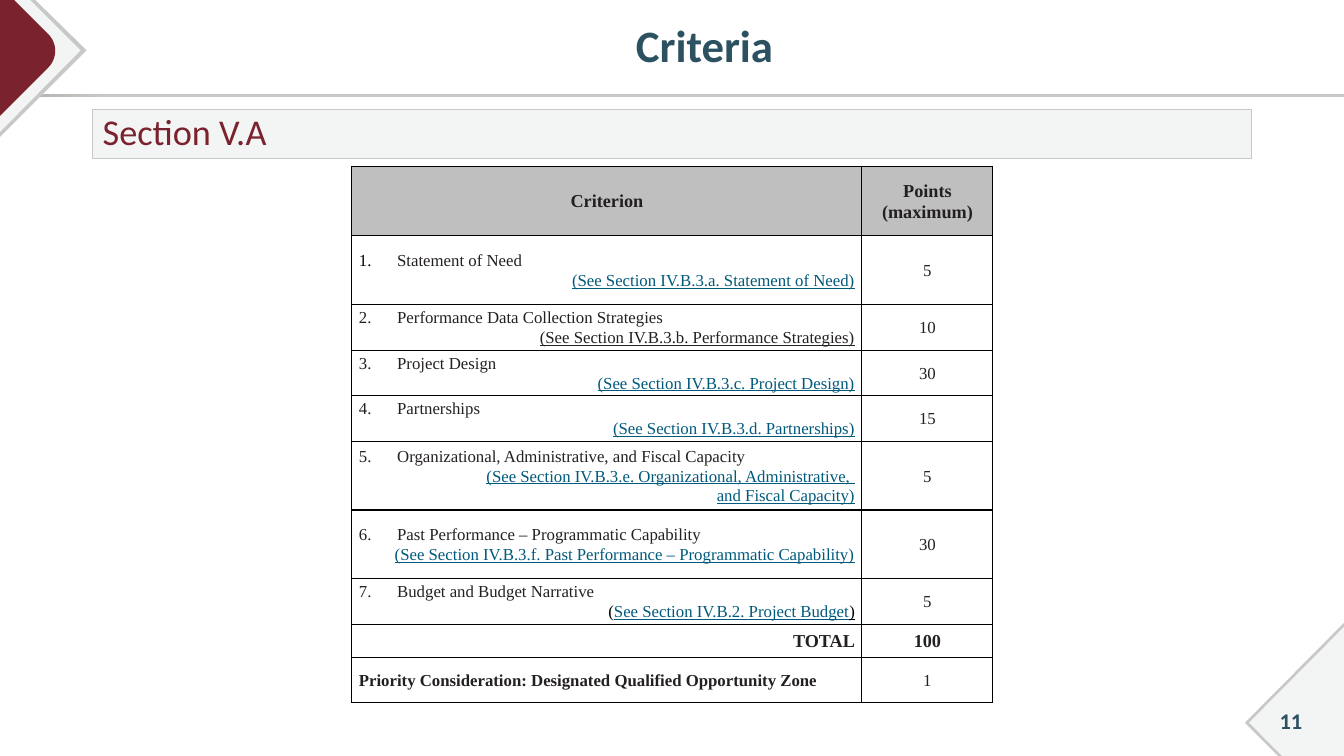
from lxml.etree import SubElement
from pptx import Presentation
from pptx.dml.color import RGBColor
from pptx.enum.shapes import MSO_SHAPE
from pptx.enum.text import MSO_ANCHOR, PP_ALIGN
from pptx.oxml import parse_xml
from pptx.oxml.ns import nsdecls, qn
from pptx.util import Inches, Pt

WIDTH, HEIGHT = Inches(13.333), Inches(7.5)
GREY, PALE, MAROON, NAVY = "C8C8C6", "F3F4F4", "7A232F", "2C5261"
INK, LINK, BLACK, HEADER = "242021", "005A7C", "000000", "BFBFBF"
LEFT, CENTER, RIGHT = PP_ALIGN.LEFT, PP_ALIGN.CENTER, PP_ALIGN.RIGHT
SERIF = "Times New Roman"
TALL, SHORT = 9.07, 6.05

# Name, reference lines, points and row height (percent of the slide)
CRITERIA = [
    ("Statement of Need", ["(See Section IV.B.3.a. Statement of Need)"], 5, TALL),
    ("Performance Data Collection Strategies",
     ["(See Section IV.B.3.b. Performance Strategies)"], 10, SHORT),
    ("Project Design", ["(See Section IV.B.3.c. Project Design)"], 30, SHORT),
    ("Partnerships", ["(See Section IV.B.3.d. Partnerships)"], 15, SHORT),
    ("Organizational, Administrative, and Fiscal Capacity",
     ["(See Section IV.B.3.e. Organizational, Administrative, ",
      "and Fiscal Capacity)"], 5, TALL),
    ("Past Performance – Programmatic Capability",
     ["(See Section IV.B.3.f. Past Performance – Programmatic Capability)"], 30, TALL),
    ("Budget and Budget Narrative", ["See Section IV.B.2. Project Budget"], 5, SHORT),
]
PLAIN_REFERENCE, BRACKETED_REFERENCE = 2, 7


def rgb(color):
    return RGBColor.from_string(color)


def across(percent):
    return round(WIDTH * percent / 100)


def down(percent):
    return round(HEIGHT * percent / 100)


def place(left, top, width, height):
    return across(left), down(top), across(width), down(height)


def add_run(paragraph, text, size, color, font=SERIF, bold=False, underline=False):
    run = paragraph.add_run()
    run.text = text
    run.font.name, run.font.size = font, Pt(size)
    run.font.bold, run.font.underline = bold, underline
    run.font.color.rgb = rgb(color)


def add_paragraph(frame, align, spacing=1.06):
    """Start a paragraph, using the frame's empty first one if there is one."""
    first = frame.paragraphs[0]
    paragraph = frame.add_paragraph() if first.runs else first
    paragraph.alignment, paragraph.line_spacing = align, spacing
    return paragraph


def number_paragraph(paragraph, number, color):
    properties = paragraph._p.get_or_add_pPr()
    properties.set("marL", str(Inches(0.38)))
    properties.set("indent", str(-Inches(0.38)))
    bullet_color = SubElement(properties, qn("a:buClr"))
    SubElement(bullet_color, qn("a:srgbClr"), val=color)
    SubElement(properties, qn("a:buAutoNum"), type="arabicPeriod", startAt=str(number))


def add_rectangle(slide, box):
    shape = slide.shapes.add_shape(MSO_SHAPE.RECTANGLE, *place(*box))
    shape.shadow.inherit = False
    return shape


def add_outline(slide, points, color):
    corners = [(across(x), down(y)) for x, y in points]
    builder = slide.shapes.build_freeform(*corners[0])
    builder.add_line_segments(corners[1:])
    shape = builder.convert_to_shape()
    shape.shadow.inherit = False
    shape.fill.solid()
    shape.fill.fore_color.rgb = rgb(color)
    shape.line.fill.background()


def curve(start, control1, control2, end, steps=16):
    """Points along a cubic Bezier curve."""
    points = []
    for step in range(steps + 1):
        t = step / steps
        weights = ((1 - t) ** 3, 3 * t * (1 - t) ** 2, 3 * t * t * (1 - t), t ** 3)
        anchors = (start, control1, control2, end)
        points.append(tuple(sum(w * a[axis] for w, a in zip(weights, anchors))
                            for axis in (0, 1)))
    return points


def add_text_box(slide, box, text, size, align, spacing=1.0):
    frame = slide.shapes.add_textbox(*place(*box)).text_frame
    frame.word_wrap = True
    frame.vertical_anchor = MSO_ANCHOR.MIDDLE
    add_run(add_paragraph(frame, align, spacing), text, size, NAVY, "Calibri", bold=True)
    return frame


def add_decoration(slide):
    rule = add_rectangle(slide, (0, 12.4, 100, 0.4))
    rule.line.fill.background()
    rule.fill.gradient()
    rule.fill.gradient_angle = 0
    for stop, position, color in zip(rule.fill.gradient_stops, (0, 0.08), ("ABABA8", GREY)):
        stop.position, stop.color.rgb = position, rgb(color)

    add_outline(slide, [(0, 0), (2.63, 0), (6.45, 6.67), (0, 18.13)], GREY)
    add_outline(slide, [(0, 0), (2.25, 0), (6, 6.67), (0, 17.47)], PALE)
    rounded_tip = curve((3.6, 4.53), (4.28, 5.73), (4.28, 7.73), (3.6, 8.93))
    add_outline(slide, [(0, 0), (1.05, 0), *rounded_tip, (0, 15.33)], MAROON)
    add_outline(slide, [(100, 82.4), (100, 100), (95.1, 100), (92.63, 95.6)], GREY)
    add_outline(slide, [(100, 82.93), (100, 100), (95.4, 100), (92.93, 95.6)], PALE)


def add_section_bar(slide):
    bar = add_rectangle(slide, (6.9, 14.53, 86.25, 6.4))
    bar.fill.solid()
    bar.fill.fore_color.rgb = rgb(PALE)
    bar.line.color.rgb = rgb(GREY)
    bar.line.width = Pt(0.75)
    bar.text_frame.vertical_anchor = MSO_ANCHOR.MIDDLE
    paragraph = add_paragraph(bar.text_frame, LEFT, 0.85)
    add_run(paragraph, "Section V.A", 25.9, MAROON, "Calibri")


def format_cell(cell, fill=None):
    cell.vertical_anchor = MSO_ANCHOR.MIDDLE
    cell.margin_left = cell.margin_right = Inches(0.07)
    cell.margin_top = cell.margin_bottom = 0
    if fill:
        cell.fill.solid()
        cell.fill.fore_color.rgb = rgb(fill)
    else:
        cell.fill.background()
    properties = cell._tc.get_or_add_tcPr()
    for index, side in enumerate("LRTB"):
        properties.insert(index, parse_xml(
            f'<a:ln{side} {nsdecls("a")} w="{Pt(1)}"><a:solidFill>'
            f'<a:srgbClr val="{BLACK}"/></a:solidFill></a:ln{side}>'))


def write_cell(cell, lines, align, size=12, bold=False):
    for line in lines:
        add_run(add_paragraph(cell.text_frame, align), line, size, INK, bold=bold)


def write_criterion(cell, number, name, references):
    paragraph = add_paragraph(cell.text_frame, LEFT)
    number_paragraph(paragraph, number, BLACK if number == 1 else INK)
    add_run(paragraph, name, 12, INK)
    color = INK if number == PLAIN_REFERENCE else LINK
    for reference in references:
        paragraph = add_paragraph(cell.text_frame, RIGHT)
        if number == BRACKETED_REFERENCE:
            add_run(paragraph, "(", 12, BLACK)
        add_run(paragraph, reference, 12, color, underline=True)
        if number == BRACKETED_REFERENCE:
            add_run(paragraph, ")", 12, BLACK, underline=True)


def add_criteria_table(slide):
    widths = (37.95, 9.75)
    heights = [9.2, *(row[3] for row in CRITERIA), 4.35, SHORT]
    box = place(26.18, 22, sum(widths), sum(heights))
    table = slide.shapes.add_table(len(heights), len(widths), *box).table
    table.first_row = table.horz_banding = False
    for column, width in zip(table.columns, widths):
        column.width = across(width)
    for index, height in enumerate(heights):
        table.rows[index].height = down(height)
        for cell in table.rows[index].cells:
            format_cell(cell, HEADER if index == 0 else None)

    write_cell(table.cell(0, 0), ["Criterion"], CENTER, 13, True)
    write_cell(table.cell(0, 1), ["Points", "(maximum)"], CENTER, 13, True)
    for number, (name, references, points, _) in enumerate(CRITERIA, 1):
        write_criterion(table.cell(number, 0), number, name, references)
        write_cell(table.cell(number, 1), [str(points)], CENTER)
    total, priority = len(heights) - 2, len(heights) - 1
    write_cell(table.cell(total, 0), ["TOTAL"], RIGHT, 13, True)
    write_cell(table.cell(total, 1), [str(sum(row[2] for row in CRITERIA))], CENTER, 13, True)
    write_cell(table.cell(priority, 0),
               ["Priority Consideration: Designated Qualified Opportunity Zone"], LEFT, bold=True)
    write_cell(table.cell(priority, 1), ["1"], CENTER)


def main():
    presentation = Presentation()
    presentation.slide_width, presentation.slide_height = WIDTH, HEIGHT
    slide = presentation.slides.add_slide(presentation.slide_layouts[6])
    add_decoration(slide)
    add_text_box(slide, (93.38, 92.67, 5.33, 5.33), "11", 16, CENTER)
    title = add_text_box(slide, (6.6, 0.67, 90.9, 11.47), "Criteria", 32, CENTER, 0.9)
    title.margin_left = Inches(0.2)
    add_section_bar(slide)
    add_criteria_table(slide)
    presentation.save("out.pptx")


if __name__ == "__main__":
    main()
